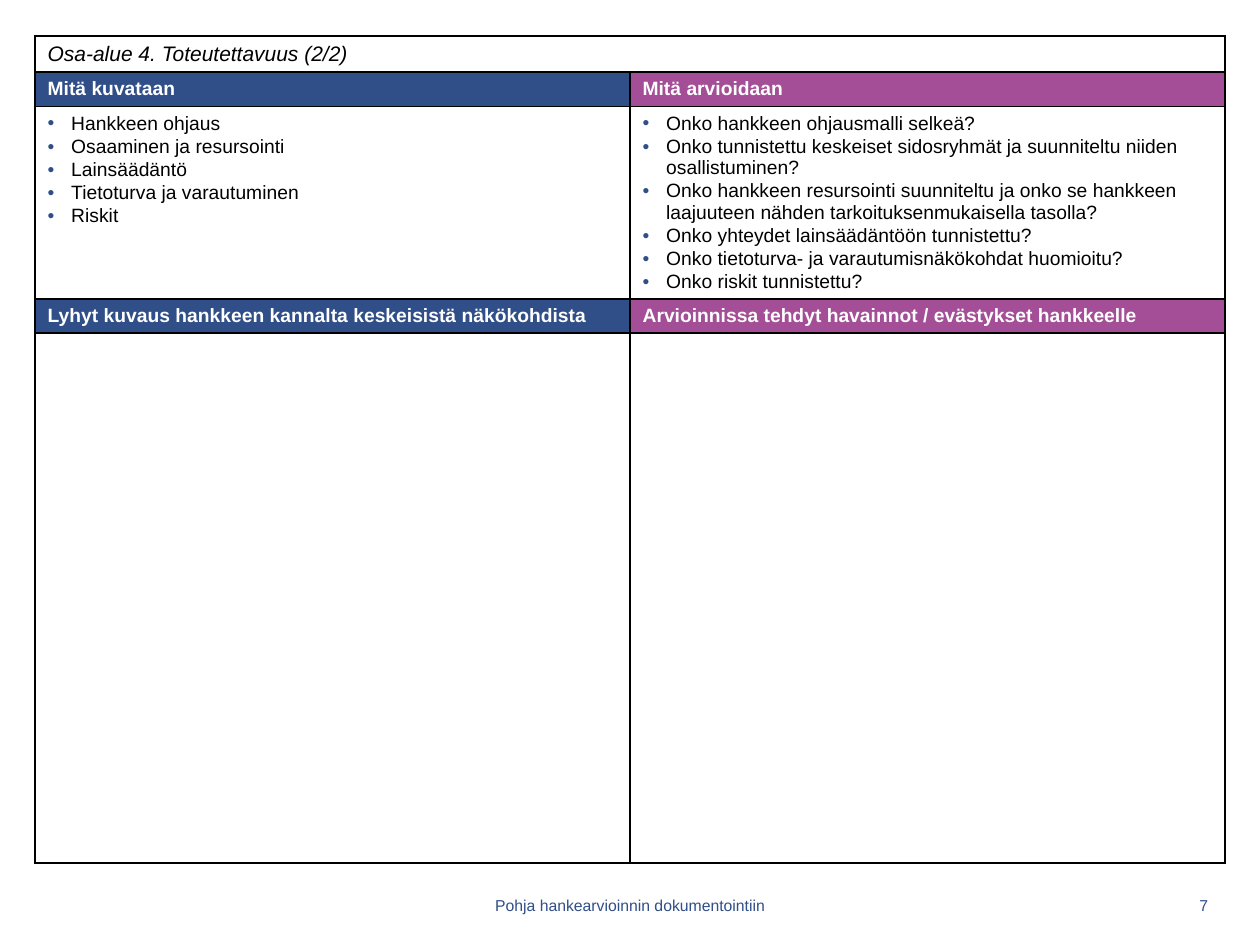
"""Build the project review form slide on feasibility."""
from dataclasses import dataclass

from lxml import etree
from pptx import Presentation
from pptx.dml.color import RGBColor
from pptx.enum.text import MSO_ANCHOR, PP_ALIGN
from pptx.oxml.ns import qn
from pptx.util import Pt

LEFT, MID, RIGHT = PP_ALIGN.LEFT, PP_ALIGN.CENTER, PP_ALIGN.RIGHT
CENTRE = MSO_ANCHOR.MIDDLE

TOPICS = [
    "Hankkeen ohjaus",
    "Osaaminen ja resursointi",
    "Lainsäädäntö",
    "Tietoturva ja varautuminen",
    "Riskit",
]
CHECKS = [
    "Onko hankkeen ohjausmalli selkeä?",
    "Onko tunnistettu keskeiset sidosryhmät ja suunniteltu niiden osallistuminen?",
    "Onko hankkeen resursointi suunniteltu ja onko se hankkeen laajuuteen nähden "
    "tarkoituksenmukaisella tasolla?",
    "Onko yhteydet lainsäädäntöön tunnistettu?",
    "Onko tietoturva- ja varautumisnäkökohdat huomioitu?",
    "Onko riskit tunnistettu?",
]
HEADS = [
    ("Mitä kuvataan", "Mitä arvioidaan"),
    (
        "Lyhyt kuvaus hankkeen kannalta keskeisistä näkökohdista",
        "Arvioinnissa tehdyt havainnot / evästykset hankkeelle",
    ),
]


@dataclass(frozen=True)
class Theme:
    """Hold the colours, type sizes and line widths."""

    font: str = "Arial"
    blue: str = "304E88"
    plum: str = "A34E96"
    white: str = "FFFFFF"
    black: str = "000000"
    title: float = 12
    body: float = 11
    foot: float = 9
    outer: float = 1.5
    inner: float = 1
    indent: float = 13.5


THEME = Theme()


def add_bullet(para, theme):
    """Give a paragraph a hanging coloured bullet."""
    props = para._p.get_or_add_pPr()
    props.set("marL", str(Pt(theme.indent)))
    props.set("indent", str(-Pt(theme.indent)))
    tint = etree.SubElement(props, qn("a:buClr"))
    etree.SubElement(tint, qn("a:srgbClr"), val=theme.blue)
    etree.SubElement(props, qn("a:buFont"), typeface=theme.font)
    etree.SubElement(props, qn("a:buChar"), char="•")


def put_text(frame, lines, size=THEME.body, color=THEME.black, bold=False,
             italic=False, align=LEFT, bullet=False):
    """Fill a text frame with one paragraph per line."""
    for num, line in enumerate(lines):
        para = frame.add_paragraph() if num else frame.paragraphs[0]
        if num:
            para.space_before = Pt(1)
        para.alignment = align
        if bullet:
            add_bullet(para, THEME)
        run = para.add_run()
        run.text = line
        font = run.font
        font.name, font.size = THEME.font, Pt(size)
        font.bold, font.italic = bold, italic
        font.color.rgb = RGBColor.from_string(color)


class Page:
    """Draw elements on the current slide in one style."""

    def __init__(self, slide, theme):
        """Keep the slide and the theme."""
        self.slide, self.theme = slide, theme

    def label(self, text, left, top, width, height, align):
        """Add a footer text box."""
        box = self.slide.shapes.add_textbox(Pt(left), Pt(top), Pt(width), Pt(height))
        frame = box.text_frame
        frame.word_wrap, frame.vertical_anchor = True, CENTRE
        put_text(frame, [text], size=self.theme.foot, color=self.theme.blue, align=align)

    def grid(self, left, top, widths, heights):
        """Add a plain white table with ruled cells."""
        shape = self.slide.shapes.add_table(
            len(heights), len(widths), Pt(left), Pt(top), Pt(sum(widths)), Pt(sum(heights)))
        table = shape.table
        table.first_row = table.horz_banding = False
        for col, width in zip(table.columns, widths):
            col.width = Pt(width)
        for row, height in zip(table.rows, heights):
            row.height = Pt(height)
        table.cell(0, 0).merge(table.cell(0, len(widths) - 1))
        for y in range(len(heights)):
            for x in range(len(widths)):
                cell = table.cell(y, x)
                wide = cell.is_merge_origin or x == len(widths) - 1
                self.rule(cell, L=x == 0, R=wide, T=y == 0, B=y == len(heights) - 1)
                self.fill(cell, self.theme.white)
        return table

    def rule(self, cell, **edges):
        """Draw the cell borders, heavier on outer edges."""
        props = cell._tc.get_or_add_tcPr()
        for side, outer in edges.items():
            width = self.theme.outer if outer else self.theme.inner
            line = etree.SubElement(props, qn(f"a:ln{side}"), w=str(Pt(width)))
            paint = etree.SubElement(line, qn("a:solidFill"))
            etree.SubElement(paint, qn("a:srgbClr"), val=self.theme.black)

    def fill(self, cell, color):
        """Fill a cell with one colour."""
        cell.fill.solid()
        cell.fill.fore_color.rgb = RGBColor.from_string(color)

    def heads(self, table, row, texts):
        """Fill a row with white headings on blue and plum."""
        for col, (text, color) in enumerate(zip(texts, (self.theme.blue, self.theme.plum))):
            cell = table.cell(row, col)
            self.fill(cell, color)
            put_text(cell.text_frame, [text], color=self.theme.white, bold=True)


def main():
    """Build and save the slide."""
    deck = Presentation()
    deck.slide_width, deck.slide_height = Pt(720), Pt(540)
    page = Page(deck.slides.add_slide(deck.slide_layouts[6]), THEME)

    table = page.grid(20, 20.6, [340, 340], [20.5, 19.5, 110, 19.5, 302.8])
    put_text(table.cell(0, 0).text_frame, ["Osa-alue 4. Toteutettavuus (2/2)"],
             size=THEME.title, italic=True)
    for row, texts in zip((1, 3), HEADS):
        page.heads(table, row, texts)
    for col, lines in enumerate((TOPICS, CHECKS)):
        put_text(table.cell(2, col).text_frame, lines, bullet=True)

    page.label("Pohja hankearvioinnin dokumentointiin", 246, 506, 228, 23, MID)
    page.label("7", 660, 506, 37.5, 23, RIGHT)
    deck.save("out.pptx")


if __name__ == "__main__":
    main()
